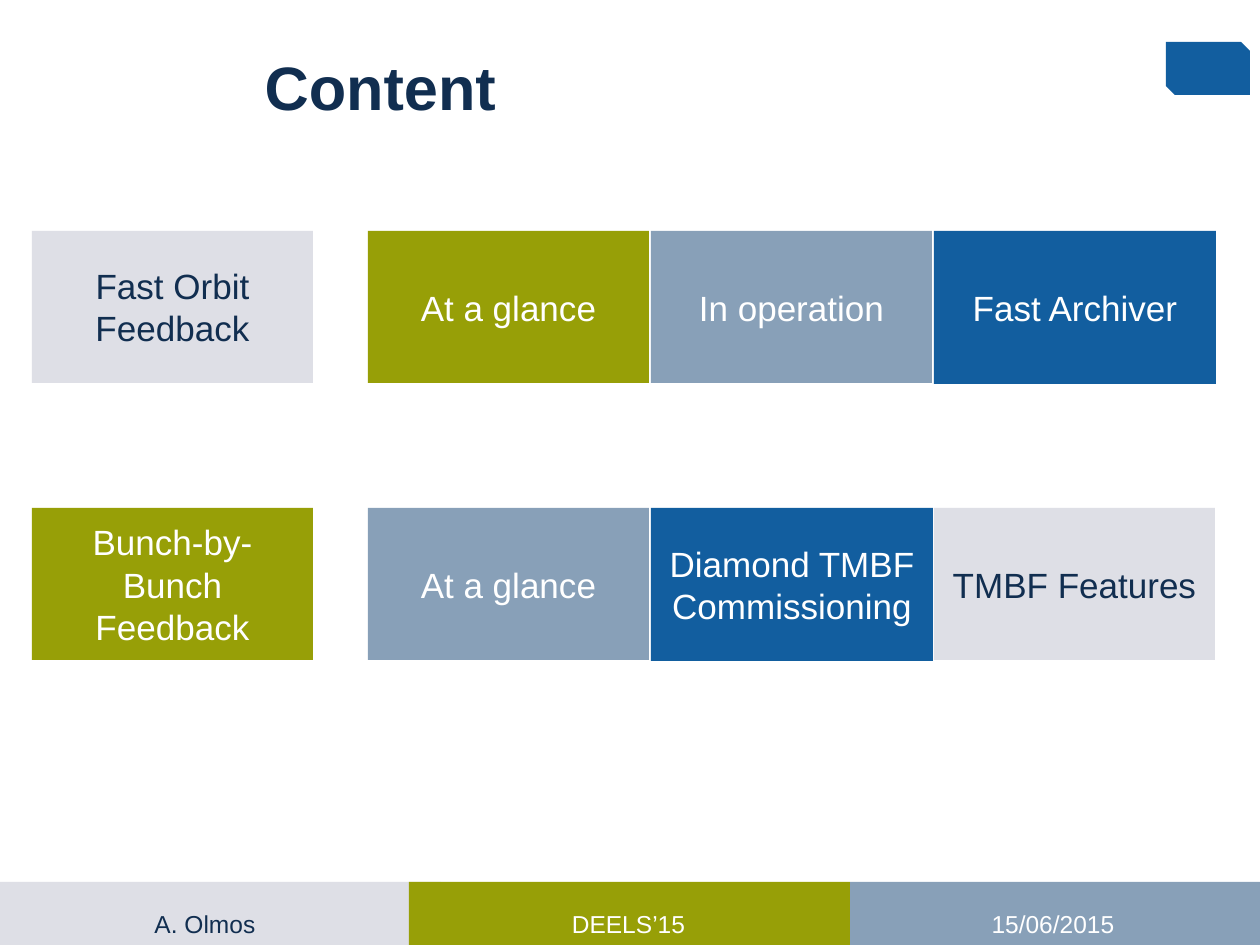
from dataclasses import dataclass

from pptx import Presentation
from pptx.dml.color import RGBColor
from pptx.enum.shapes import MSO_SHAPE
from pptx.enum.text import MSO_ANCHOR, PP_ALIGN
from pptx.util import Emu, Pt

PX_PER_INCH = 126
FONT = "Arial"
NAVY = RGBColor(0x11, 0x2E, 0x50)
WHITE = RGBColor(0xFF, 0xFF, 0xFF)
LAVENDER = RGBColor(0xDE, 0xDF, 0xE6)
OLIVE = RGBColor(0x97, 0x9F, 0x07)
STEEL = RGBColor(0x88, 0xA0, 0xB8)
BLUE = RGBColor(0x12, 0x5E, 0x9F)

FOOTER_TOP, FOOTER_HEIGHT = 882, 63
LABEL_TOP, LABEL_HEIGHT = 902, 43
TOPIC_LEFT, SECTION_LEFT, SECTION_PITCH = 32, 368, 283
BOX_WIDTH, BOX_HEIGHT = 281, 152


@dataclass(frozen=True)
class FooterPart:
    text: str
    fill: RGBColor
    left: int
    width: int
    label_left: int
    label_width: int


@dataclass(frozen=True)
class Box:
    text: str
    fill: RGBColor


@dataclass(frozen=True)
class TopicRow:
    top: int
    topic: Box
    sections: tuple[Box, ...]


FOOTER = (
    FooterPart("A. Olmos", LAVENDER, 0, 441, 0, 410),
    FooterPart("DEELS’15", OLIVE, 409, 441, 409, 439),
    FooterPart("15/06/2015", STEEL, 850, 410, 848, 410),
)
ROWS = (
    TopicRow(231, Box("Fast Orbit Feedback", LAVENDER), (
        Box("At a glance", OLIVE),
        Box("In operation", STEEL),
        Box("Fast Archiver", BLUE),
    )),
    TopicRow(508, Box("Bunch-by-Bunch Feedback", OLIVE), (
        Box("At a glance", STEEL),
        Box("Diamond TMBF Commissioning", BLUE),
        Box("TMBF Features", LAVENDER),
    )),
)


def px(value: int) -> Emu:
    return Emu(round(value * 914400 / PX_PER_INCH))


def text_color(fill: RGBColor) -> RGBColor:
    return NAVY if fill == LAVENDER else WHITE


def set_text(shape, text: str, size: int, color: RGBColor,
             anchor=MSO_ANCHOR.MIDDLE, alignment=PP_ALIGN.CENTER, bold: bool = False) -> None:
    frame = shape.text_frame
    frame.text = text
    frame.word_wrap = True
    frame.vertical_anchor = anchor
    paragraph = frame.paragraphs[0]
    paragraph.alignment = alignment
    font = paragraph.font
    font.name, font.size, font.bold = FONT, Pt(size), bold
    font.color.rgb = color


def add_panel(slide, left: int, top: int, width: int, height: int,
              fill: RGBColor, kind=MSO_SHAPE.RECTANGLE):
    shape = slide.shapes.add_shape(kind, px(left), px(top), px(width), px(height))
    shape.shadow.inherit = False
    shape.fill.solid()
    shape.fill.fore_color.rgb = fill
    shape.line.fill.background()
    return shape


def add_footer(slide) -> None:
    for part in FOOTER:
        add_panel(slide, part.left, FOOTER_TOP, part.width, FOOTER_HEIGHT, part.fill)
    for part in FOOTER:
        label = slide.shapes.add_textbox(px(part.label_left), px(LABEL_TOP),
                                         px(part.label_width), px(LABEL_HEIGHT))
        set_text(label, part.text, 14, text_color(part.fill))


def add_box(slide, box: Box, left: int, top: int) -> None:
    extra = 1 if box.fill == BLUE else 0
    shape = add_panel(slide, left, top, BOX_WIDTH + extra, BOX_HEIGHT + extra, box.fill)
    set_text(shape, box.text, 20, text_color(box.fill))


def add_row(slide, row: TopicRow) -> None:
    add_box(slide, row.topic, TOPIC_LEFT, row.top)
    for column, section in enumerate(row.sections):
        add_box(slide, section, SECTION_LEFT + column * SECTION_PITCH, row.top)


def add_title(slide) -> None:
    title = slide.shapes.title
    title.left, title.top, title.width, title.height = px(252), px(42), px(903), px(87)
    set_text(title, "Content", 35, NAVY, MSO_ANCHOR.BOTTOM, PP_ALIGN.LEFT, bold=True)


def main() -> None:
    presentation = Presentation()
    presentation.slide_width, presentation.slide_height = px(1260), px(945)
    slide = presentation.slides.add_slide(presentation.slide_layouts[5])
    add_title(slide)
    add_panel(slide, 1166, 42, 84, 53, BLUE, MSO_SHAPE.SNIP_2_DIAG_RECTANGLE)
    add_footer(slide)
    for row in ROWS:
        add_row(slide, row)
    presentation.save("out.pptx")


if __name__ == "__main__":
    main()
